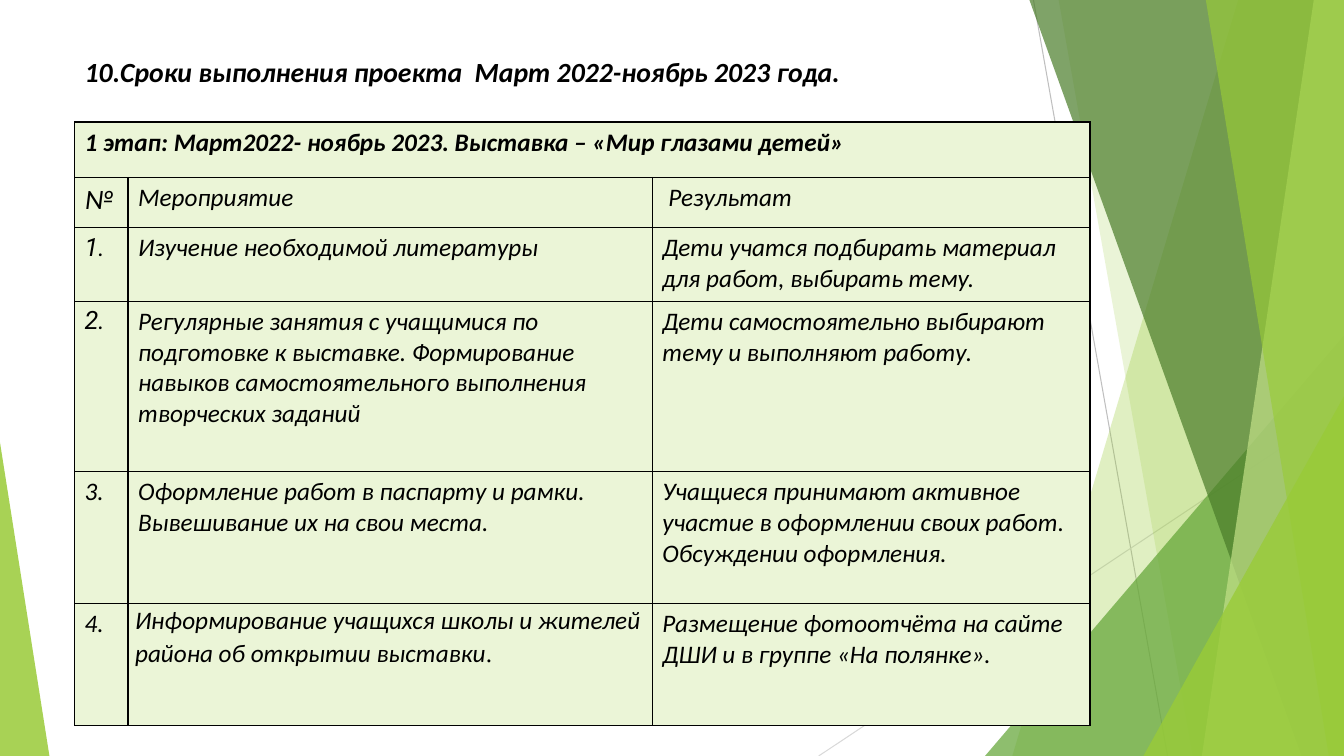
from pptx import Presentation
from pptx.dml.color import RGBColor
from pptx.enum.shapes import MSO_CONNECTOR, MSO_SHAPE
from pptx.enum.text import MSO_ANCHOR, PP_ALIGN
from pptx.oxml.ns import qn
from pptx.util import Inches, Pt
from lxml import etree

STRAIGHT = MSO_CONNECTOR.STRAIGHT
TRIANGLE = MSO_SHAPE.ISOSCELES_TRIANGLE
TOP = MSO_ANCHOR.TOP
LEFT = PP_ALIGN.LEFT

WIDTH, HEIGHT = 13.33, 7.5
BLACK = RGBColor(0x00, 0x00, 0x00)
GRAY = RGBColor(0xBF, 0xBF, 0xBF)
LIGHT_GRAY = RGBColor(0xD9, 0xD9, 0xD9)
LIME = RGBColor(0x99, 0xCB, 0x38)
PALE_LIME = RGBColor(0xC2, 0xE0, 0x88)
GREEN = RGBColor(0x63, 0xA5, 0x37)
DARK_GREEN = RGBColor(0x4A, 0x7C, 0x29)
CELL_GREEN = RGBColor(0xEB, 0xF5, 0xD7)

TITLE = "10.Сроки выполнения проекта  Март 2022-ноябрь 2023 года."
STAGE = "1 этап: Март2022- ноябрь 2023. Выставка – «Мир глазами детей»"
COLUMNS = [0.53, 5.2, 4.34]
ROWS = [0.55, 0.5, 0.73, 1.69, 1.31, 1.21]
CONTENT = [
    [STAGE, "", ""],
    ["№", "Мероприятие", "Результат"],
    ["1.", "Изучение необходимой литературы",
     "Дети учатся подбирать материал для работ, выбирать тему."],
    ["2.", "Регулярные занятия с учащимися по подготовке к выставке. "
     "Формирование навыков самостоятельного выполнения творческих заданий",
     "Дети самостоятельно выбирают тему и выполняют работу."],
    ["3.", "Оформление работ в паспарту и рамки. Вывешивание их на свои места.",
     "Учащиеся принимают активное участие в оформлении своих работ. "
     "Обсуждении оформления."],
    ["4.", "Информирование учащихся школы и жителей района об открытии выставки",
     "Размещение фотоотчёта на сайте ДШИ и в группе «На полянке»."],
]


def add_run(p, text, color=BLACK, **font):
    r = p.add_run()
    r.text = text
    values = {"name": "Calibri", "size": Pt(18), "bold": False, "italic": True}
    values.update(font)
    for name, value in values.items():
        setattr(r.font, name, value)
    r.font.color.rgb = color


def paint(shape, color, opacity):
    shape.shadow.inherit = False
    shape.fill.solid()
    shape.fill.fore_color.rgb = color
    shape.line.fill.background()
    clr = shape.element.spPr.find(".//" + qn("a:srgbClr"))
    etree.SubElement(clr, qn("a:alpha"), val=str(opacity * 1000))


def add_line(s, x1, y1, x2, y2, color):
    line = s.shapes.add_connector(
        STRAIGHT, Inches(x1), Inches(y1), Inches(x2), Inches(y2))
    line.line.color.rgb = color
    line.line.width = Pt(0.75)
    etree.SubElement(line.element.spPr, qn("a:effectLst"))


def add_strip(s, top_x, bottom_x, color, opacity):
    builder = s.shapes.build_freeform(Inches(top_x), 0)
    corners = [(WIDTH, 0), (WIDTH, HEIGHT), (bottom_x, HEIGHT)]
    builder.add_line_segments([(Inches(x), Inches(y)) for x, y in corners])
    paint(builder.convert_to_shape(), color, opacity)


def add_triangle(s, left, top, width, apex, color, opacity):
    triangle = s.shapes.add_shape(
        TRIANGLE, Inches(left), Inches(top), Inches(width), Inches(HEIGHT - top))
    triangle.adjustments[0] = apex
    paint(triangle, color, opacity)


def add_background(s):
    add_line(s, 10.25, 0, 11.58, HEIGHT, GRAY)
    add_line(s, WIDTH, 4.03, 8.12, HEIGHT, LIGHT_GRAY)
    add_strip(s, 12.28, 10.04, LIME, 30)
    add_strip(s, 10.5, 11.83, LIME, 20)
    add_triangle(s, 9.77, 3.33, 3.56, 1, GREEN, 72)
    add_strip(s, 10.21, 12.91, DARK_GREEN, 70)
    add_strip(s, 13.03, 11.92, PALE_LIME, 70)
    add_strip(s, 11.96, 13.18, LIME, 65)
    add_triangle(s, 11.34, 3.93, 1.99, 1, LIME, 80)
    add_triangle(s, 0, 4.39, 0.49, 0, LIME, 85)


def style_cell(cell):
    tc_pr = cell.fill and cell._tc.get_or_add_tcPr()
    for side in ("a:lnL", "a:lnR", "a:lnT", "a:lnB"):
        ln = etree.SubElement(tc_pr, qn(side), w=str(Pt(1)))
        solid = etree.SubElement(ln, qn("a:solidFill"))
        etree.SubElement(solid, qn("a:srgbClr"), val=str(BLACK))
    cell.fill.solid()
    cell.fill.fore_color.rgb = CELL_GREEN


def add_schedule(s):
    frame = s.shapes.add_table(
        len(ROWS), len(COLUMNS), Inches(0.74), Inches(1.21),
        Inches(sum(COLUMNS)), Inches(sum(ROWS)))
    table = frame.table
    table.first_row = table.horz_banding = False
    for column, width in zip(table.columns, COLUMNS):
        column.width = Inches(width)
    for row, height in zip(table.rows, ROWS):
        row.height = Inches(height)
    table.cell(0, 0).merge(table.cell(0, len(COLUMNS) - 1))

    special = {(0, 0): {"bold": True}, (1, 0): {"size": Pt(20)},
               (2, 0): {"name": "Roboto"}, (3, 0): {"name": "Roboto"}}
    for i, texts in enumerate(CONTENT):
        for j, text in enumerate(texts):
            cell = table.cell(i, j)
            style_cell(cell)
            if text:
                add_run(cell.text_frame.paragraphs[0], text,
                        **special.get((i, j), {}))

    table.cell(1, 2).margin_left = Inches(0.16)
    opening = table.cell(5, 1)
    opening.margin_left = opening.margin_right = Inches(0.07)
    opening.margin_top = opening.margin_bottom = 0
    p = opening.text_frame.paragraphs[0]
    p.line_spacing = 1.07
    p.space_after = Pt(8)
    add_run(p, ".", name="Times New Roman", italic=False)


def add_title(s):
    title = s.shapes.title
    box = {"left": 0.74, "top": 0.11, "width": 9.4, "height": 0.99}
    for name, value in box.items():
        setattr(title, name, Inches(value))
    tf = title.text_frame
    tf.word_wrap = True
    tf.vertical_anchor = TOP
    tf.margin_top = Inches(0.43)
    p = tf.paragraphs[0]
    p.alignment = LEFT
    add_run(p, TITLE, size=Pt(19.8), bold=True)


def main():
    prs = Presentation()
    prs.slide_width = Inches(WIDTH)
    prs.slide_height = Inches(HEIGHT)
    s = prs.slides.add_slide(prs.slide_layouts[5])
    add_background(s)
    add_schedule(s)
    add_title(s)
    prs.save("out.pptx")


if __name__ == "__main__":
    main()
